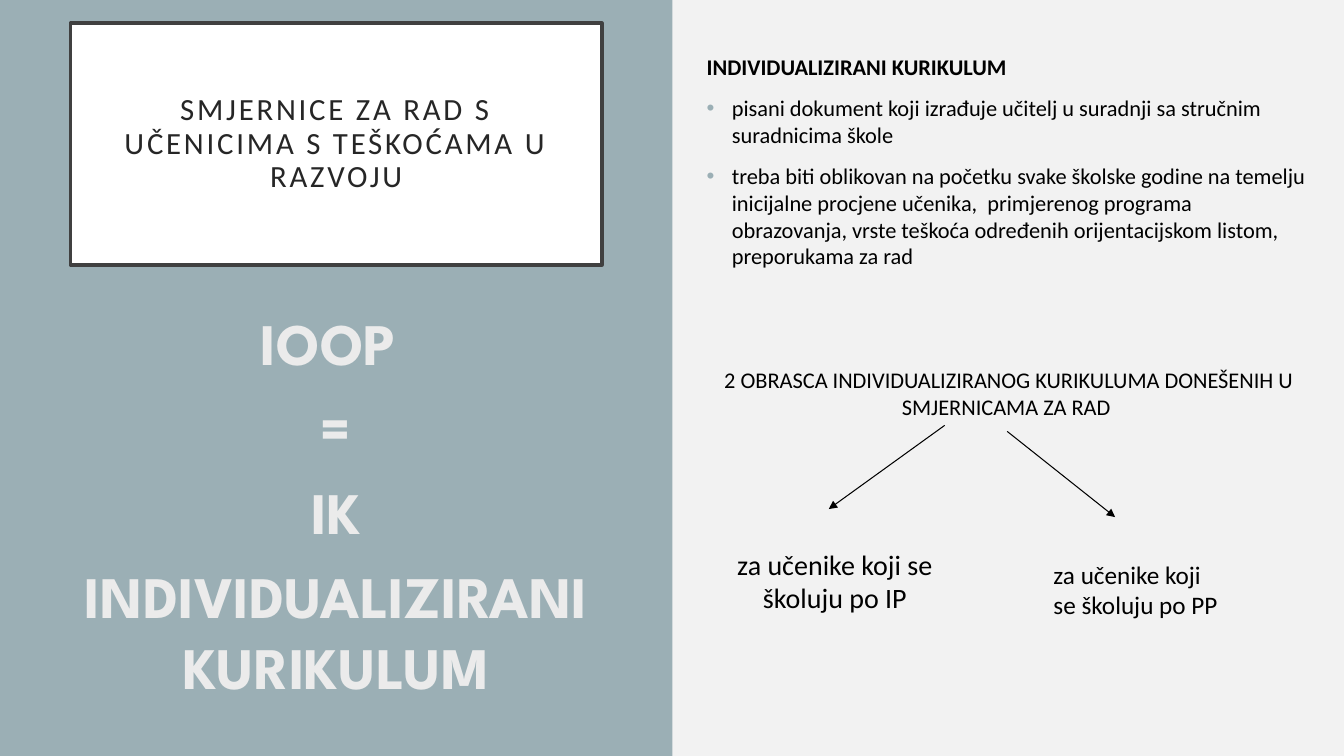
"""Build the slide on the individualised curriculum."""
from dataclasses import dataclass

from lxml import etree
from pptx import Presentation
from pptx import util as u
from pptx.dml.color import RGBColor
from pptx.enum import shapes, text
from pptx.oxml.ns import qn


@dataclass(frozen=True)
class Theme:
    """Colours, fonts and type sizes."""
    paper: str = "F2F2F2"
    panel: str = "9BAFB5"
    white: str = "FFFFFF"
    frame: str = "404040"
    title: str = "262626"
    ink: str = "000000"
    pale: str = "EBEBEB"
    body_font: str = "Calibri"
    display_font: str = "League Spartan"
    title_size: float = 22
    body_size: float = 16
    display_size: float = 42
    ip_size: float = 20
    pp_size: float = 18
    gap: float = 10
    wide_gap: float = 69


T = Theme()
CENTER = text.PP_ALIGN.CENTER
LEFT = text.PP_ALIGN.LEFT


def rgb(code):
    """Turn a hex code into a colour."""
    return RGBColor.from_string(code)


def add_box(s, place, fill, line=None, width=0):
    """Add a flat rectangle with an optional outline."""
    sp = s.shapes.add_shape(shapes.MSO_SHAPE.RECTANGLE, *map(u.Inches, place))
    sp.shadow.inherit = False
    sp.fill.solid()
    sp.fill.fore_color.rgb = rgb(fill)
    if line:
        sp.line.color.rgb = rgb(line)
        sp.line.width = u.Pt(width)
    else:
        sp.line.fill.background()
    return sp


def add_text(s, place):
    """Add an empty wrapping text box and return its frame."""
    tf = s.shapes.add_textbox(*map(u.Inches, place)).text_frame
    tf.word_wrap = True
    return tf


def add_para(tf, words, size, color=T.ink, font=T.body_font, bold=False,
             align=LEFT, before=0):
    """Append a paragraph with one run."""
    first = tf.paragraphs[0]
    p = tf.add_paragraph() if first.runs else first
    p.alignment = align
    p.space_before = u.Pt(before)
    r = p.add_run()
    r.text = words
    r.font.size = u.Pt(size)
    r.font.name = font
    r.font.bold = bold
    r.font.color.rgb = rgb(color)
    return p


def add_bullet(p, color):
    """Give a paragraph a coloured bullet and a hanging indent."""
    pPr = p._p.get_or_add_pPr()
    pPr.set("marL", str(u.Inches(0.25)))
    pPr.set("indent", str(-u.Inches(0.25)))
    clr = etree.SubElement(pPr, qn("a:buClr"))
    etree.SubElement(clr, qn("a:srgbClr"), val=color)
    etree.SubElement(pPr, qn("a:buFont"), typeface="Arial")
    etree.SubElement(pPr, qn("a:buChar"), char="•")


def add_arrow(s, *ends):
    """Add a thin line with a triangular head at its end."""
    cn = s.shapes.add_connector(shapes.MSO_CONNECTOR.STRAIGHT, *map(u.Inches, ends))
    cn.line.color.rgb = rgb(T.ink)
    cn.line.width = u.Pt(0.75)
    etree.SubElement(cn.line._get_or_add_ln(), qn("a:tailEnd"), type="triangle")
    etree.SubElement(cn._element.spPr, qn("a:effectLst"))


def add_title(s):
    """Add the framed title."""
    tf = add_box(s, (0.7, 0.23, 5.27, 2.4), T.white, T.frame, 2.5).text_frame
    tf.word_wrap = True
    tf.vertical_anchor = text.MSO_ANCHOR.MIDDLE
    tf.margin_left = tf.margin_right = u.Inches(0.2)
    tf.margin_top = tf.margin_bottom = u.Inches(0.2)
    p = add_para(tf, "SMJERNICE ZA RAD S UČENICIMA S TEŠKOĆAMA U RAZVOJU",
                 T.title_size, T.title, align=CENTER)
    p.line_spacing = 0.9
    p.runs[0].font._element.set("spc", "200")


def add_body(s):
    """Add the definition, its bullets and the heading of the two forms."""
    tf = add_text(s, (6.91, 0.48, 6.19, 6.52))
    add_para(tf, "INDIVIDUALIZIRANI KURIKULUM", T.body_size, bold=True, before=T.gap)
    for words in (
        "pisani dokument koji izrađuje učitelj u suradnji sa stručnim suradnicima škole",
        "treba biti oblikovan na početku svake školske godine na temelju "
        "inicijalne procjene učenika,  primjerenog programa obrazovanja, "
        "vrste teškoća određenih orijentacijskom listom, preporukama za rad",
    ):
        add_bullet(add_para(tf, words, T.body_size, before=T.gap), T.panel)
    add_para(tf, "2 OBRASCA INDIVIDUALIZIRANOG KURIKULUMA DONEŠENIH U "
             "SMJERNICAMA ZA RAD ", T.body_size, align=CENTER, before=T.wide_gap)


def add_equation(s):
    """Add the large abbreviation lines on the panel."""
    tf = add_text(s, (0.58, 2.99, 5.51, 4.06))
    for words in ("IOOP ", "=", "IK", "INDIVIDUALIZIRANI KURIKULUM"):
        add_para(tf, words, T.display_size, T.pale, T.display_font, True, CENTER, T.gap)


def main():
    """Build and save the slide."""
    prs = Presentation()
    prs.slide_width, prs.slide_height = u.Inches(13.33), u.Inches(7.5)
    s = prs.slides.add_slide(prs.slide_layouts[6])
    s.background.fill.solid()
    s.background.fill.fore_color.rgb = rgb(T.paper)
    add_box(s, (0, 0, 6.67, 7.5), T.panel)
    add_title(s)
    add_body(s)
    add_equation(s)
    add_arrow(s, 9.37, 4.22, 8.22, 5.05)
    add_arrow(s, 9.99, 4.28, 11.06, 5.13)
    add_para(add_text(s, (7.19, 5.38, 2.18, 0.77)),
             "za učenike koji se školuju po IP", T.ip_size, align=CENTER)
    add_para(add_text(s, (10.35, 5.5, 1.88, 1)),
             "za učenike koji se školuju po PP", T.pp_size)
    prs.save("out.pptx")


if __name__ == "__main__":
    main()
